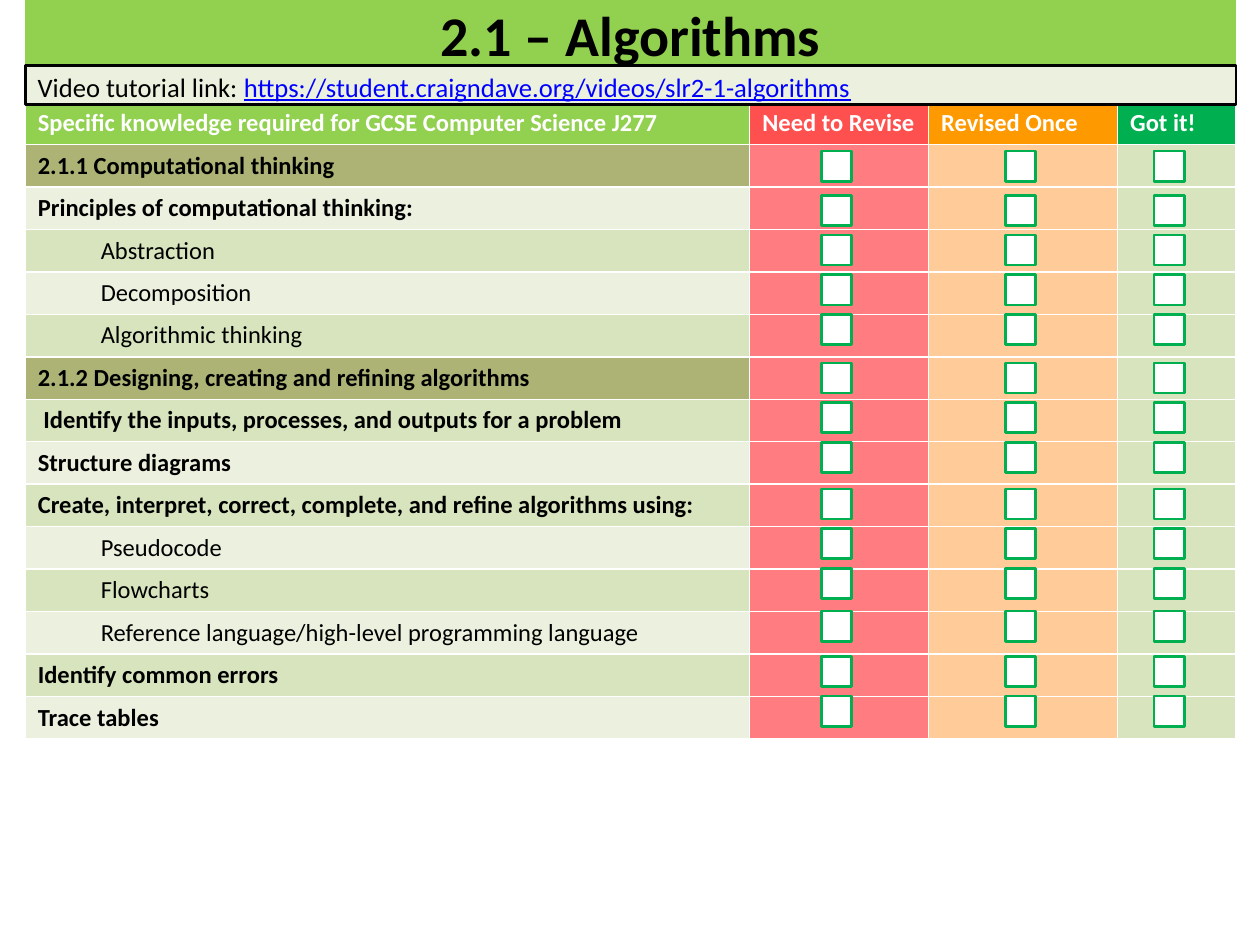
from collections import namedtuple
from dataclasses import dataclass

from lxml import etree
from pptx import Presentation
from pptx import util as u
from pptx.dml.color import RGBColor
from pptx.enum import shapes, text
from pptx.oxml.ns import qn

Box = namedtuple("Box", "x y w h")  # in grid columns and rows
SLIDE_W, SLIDE_H = u.Inches(10), u.Inches(7.5)
COL, ROW = SLIDE_W / 100, SLIDE_H / 75


@dataclass(frozen=True)
class Theme:
    font: str = "Calibri"
    title_size: float = 32
    link_size: float = 15.2
    table_size: float = 14
    line: float = 1.5
    ink: str = "000000"
    white: str = "FFFFFF"
    link: str = "0000FF"
    lime: str = "92D050"
    green: str = "00B050"
    section: str = "ADB375"
    pale: str = "EBF1DE"
    soft: str = "D7E4BD"
    headers: tuple = ("92D050", "FF5050", "FF9900", "00B050")
    ratings: tuple = ("FF7C80", "FFCC99", "D7E4BD")


T = Theme()
HEADERS = ["Specific knowledge required for GCSE Computer Science J277",
           "Need to Revise", "Revised Once", "Got it!"]
# Topic, fill, whether it is an indented sub-topic
TOPICS = [
    ("2.1.1 Computational thinking", T.section, False),
    ("Principles of computational thinking:", T.pale, False),
    ("Abstraction", T.soft, True),
    ("Decomposition", T.pale, True),
    ("Algorithmic thinking", T.soft, True),
    ("2.1.2 Designing, creating and refining algorithms", T.section, False),
    (" Identify the inputs, processes, and outputs for a problem", T.soft, False),
    ("Structure diagrams", T.pale, False),
    ("Create, interpret, correct, complete, and refine algorithms using:", T.soft, False),
    ("Pseudocode", T.pale, True),
    ("Flowcharts", T.soft, True),
    ("Reference language/high-level programming language", T.pale, True),
    ("Identify common errors", T.soft, False),
    ("Trace tables", T.pale, False),
]
COLUMN_WIDTHS = [57.5, 14.2, 15, 9.4]
# Tick boxes: column offsets, then (row offset, count) of each evenly spaced run
TICK_COLUMNS = [63.2, 77.8, 89.6]
TICK_RUNS = [(3.9, 1), (7.4, 4), (20.7, 3), (30.7, 3), (40.4, 1), (44, 2)]
TICK_PITCH, TICK_SIZE = 3.15, 2.4


def rgb(value):
    return RGBColor.from_string(value)


def emu(box):
    return [round(v * unit) for v, unit in zip(box, (COL, ROW, COL, ROW))]


def style_run(r, size, color, bold=False):
    r.font.name, r.font.size, r.font.bold = T.font, u.Pt(size), bold
    r.font.color.rgb = rgb(color)


def paint(sp, fill, line):
    sp.shadow.inherit = False
    sp.fill.solid()
    sp.fill.fore_color.rgb = rgb(fill)
    sp.line.color.rgb = rgb(line)
    sp.line.width = u.Pt(T.line)


def add_title(s, box):
    sp = s.shapes.title
    sp.left, sp.top, sp.width, sp.height = emu(box)
    sp.fill.solid()
    sp.fill.fore_color.rgb = rgb(T.lime)
    tf = sp.text_frame
    tf.text = "2.1 – Algorithms"
    tf.auto_size = text.MSO_AUTO_SIZE.NONE
    tf.vertical_anchor = text.MSO_ANCHOR.MIDDLE
    p = tf.paragraphs[0]
    p.alignment = text.PP_ALIGN.CENTER
    style_run(p.runs[0], T.title_size, T.ink, True)


def fill_cell(cell, fill, words="", color=T.ink, bold=True, indented=False):
    cell.fill.solid()
    cell.fill.fore_color.rgb = rgb(fill)
    p = cell.text_frame.paragraphs[0]
    if not words:
        # Keep an empty cell as low as its text row
        etree.SubElement(p._p, qn("a:endParaRPr"), sz=str(T.table_size * 100))
        return
    p.text = words
    if indented:
        p.level = 1
        p._p.get_or_add_pPr().set("marL", str(u.Inches(0.5)))
    style_run(p.runs[0], T.table_size, color, bold)


def add_checklist(s, box):
    table = s.shapes.add_table(len(TOPICS) + 1, len(HEADERS), *emu(box)).table
    table.horz_banding = False
    for column, width in zip(table.columns, COLUMN_WIDTHS):
        column.width = round(width * COL)
    for i, (words, fill) in enumerate(zip(HEADERS, T.headers)):
        fill_cell(table.cell(0, i), fill, words, T.white)
    for i, (words, fill, sub) in enumerate(TOPICS, 1):
        fill_cell(table.cell(i, 0), fill, words, bold=not sub, indented=sub)
        for j, rating in enumerate(T.ratings, 1):
            fill_cell(table.cell(i, j), rating)


def add_tick_boxes(s, box):
    tops = [start + k * TICK_PITCH for start, count in TICK_RUNS for k in range(count)]
    for top in tops:
        for left in TICK_COLUMNS:
            place = Box(box.x + left, box.y + top, TICK_SIZE, TICK_SIZE)
            sp = s.shapes.add_shape(shapes.MSO_SHAPE.RECTANGLE, *emu(place))
            paint(sp, T.white, T.green)


def add_video_bar(s, box):
    sp = s.shapes.add_shape(shapes.MSO_SHAPE.RECTANGLE, *emu(box))
    paint(sp, T.pale, T.ink)
    tf = sp.text_frame
    tf.word_wrap = True
    tf.vertical_anchor = text.MSO_ANCHOR.MIDDLE
    tf.margin_top, tf.margin_bottom = u.Inches(0.05), u.Inches(0.02)
    p = tf.paragraphs[0]
    p.alignment = text.PP_ALIGN.LEFT
    for words, color in [
        ("Video tutorial link: ", T.ink),
        ("https://student.craigndave.org/videos/slr2-1-algorithms", T.link),
    ]:
        r = p.add_run()
        r.text = words
        style_run(r, T.link_size, color)
        r.font.underline = color == T.link


def main():
    prs = Presentation()
    prs.slide_width, prs.slide_height = SLIDE_W, SLIDE_H
    s = prs.slides.add_slide(prs.slide_layouts[5])
    checklist = Box(2, 8.1, 96.1, 50)
    add_title(s, Box(2, 0, 96.1, 5.4))
    add_checklist(s, checklist)
    add_tick_boxes(s, checklist)
    add_video_bar(s, Box(2, 5.2, 96.1, 3.1))
    prs.save("out.pptx")


if __name__ == "__main__":
    main()
